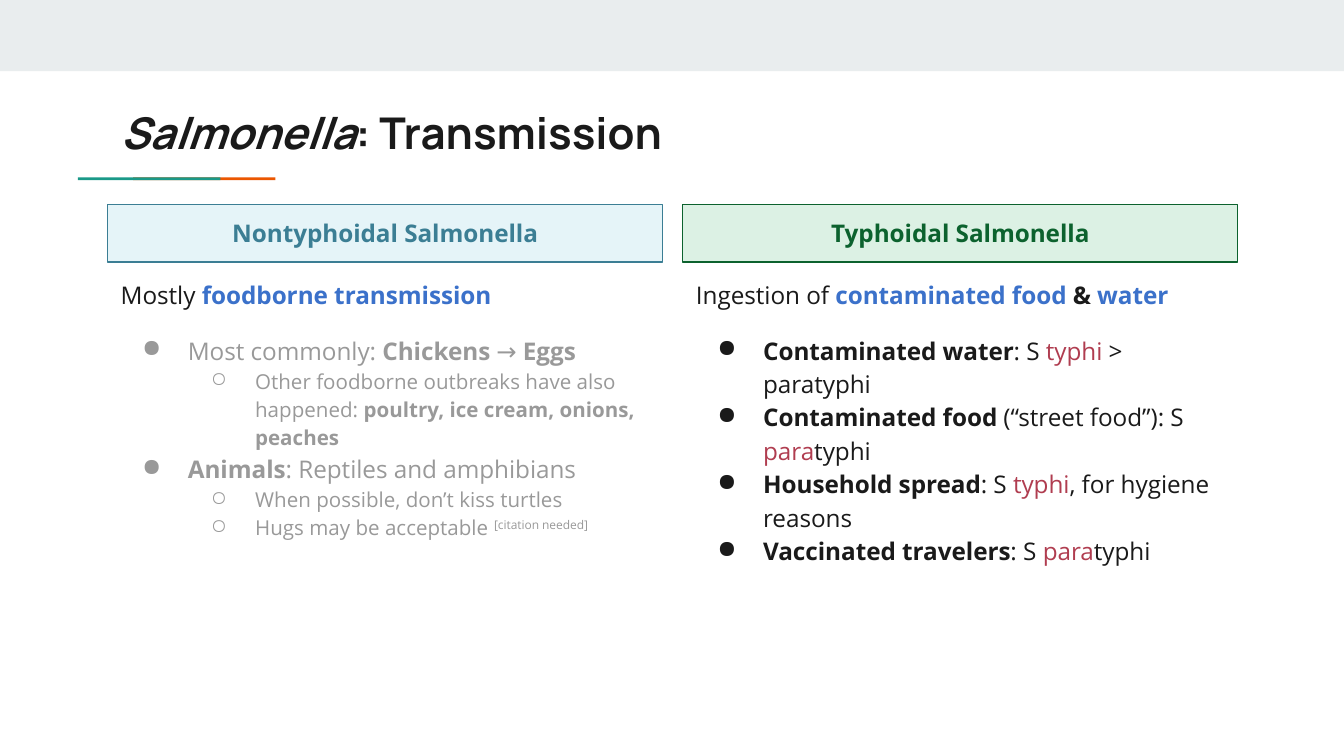
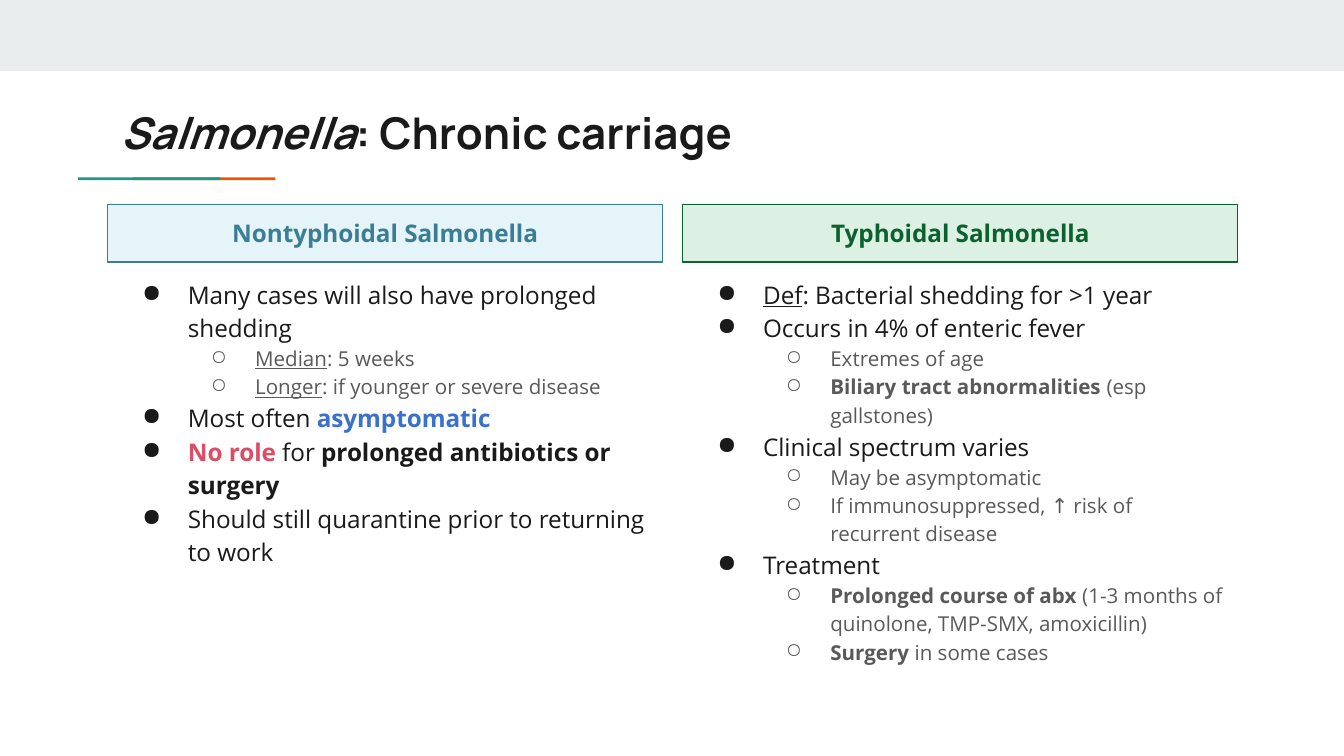
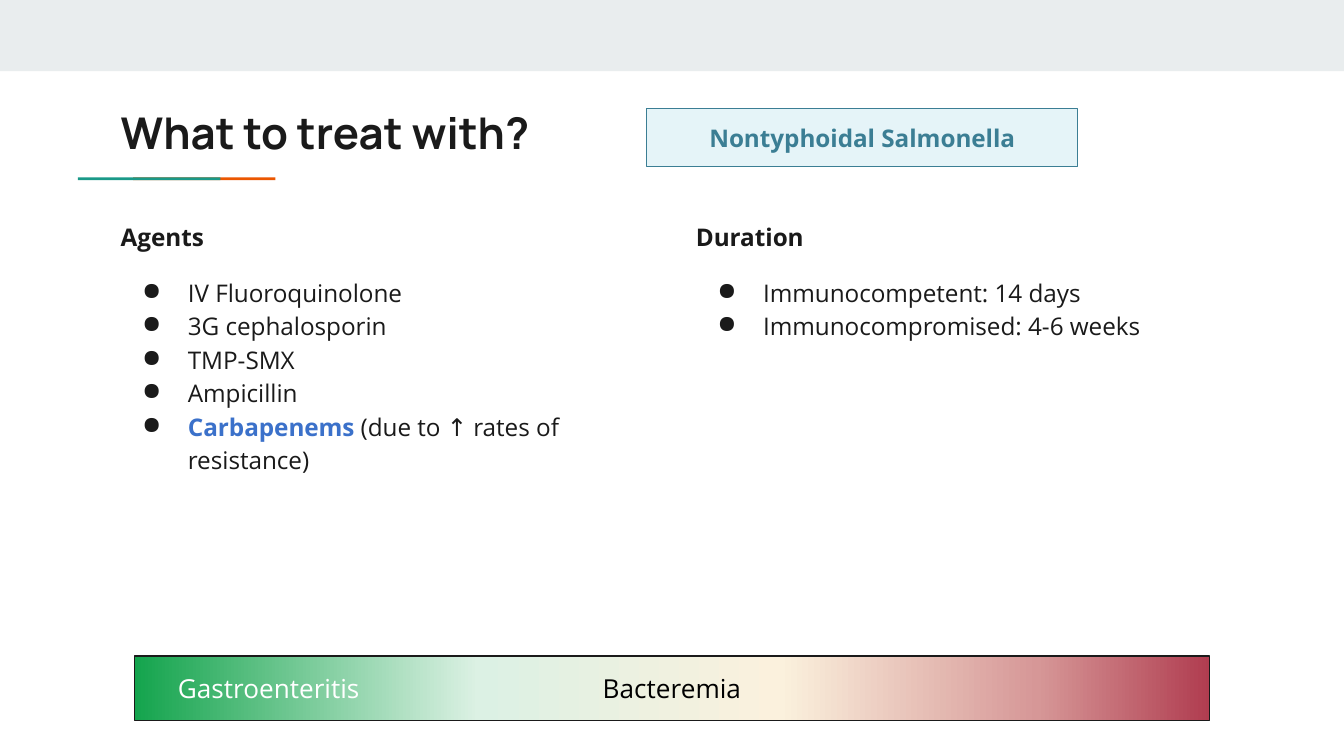
from dataclasses import dataclass

from lxml.etree import SubElement
from pptx import Presentation
from pptx.dml.color import RGBColor
from pptx.enum.shapes import MSO_SHAPE
from pptx.enum.text import MSO_ANCHOR, PP_ALIGN
from pptx.oxml.ns import qn
from pptx.util import Inches, Pt


@dataclass(frozen=True)
class Theme:
    head: str = "Manrope"
    body: str = "Open Sans"
    big: float = 23.4
    scale: float = 14
    text: float = 13
    small: float = 11
    ink: str = "1A1A1A"
    grey: str = "595959"
    dim: str = "999999"
    blue: str = "3B71CA"
    red: str = "B03D50"
    pink: str = "DC4C64"
    band: str = "E9EDEE"
    teal: str = "1A9988"
    orange: str = "EB5600"
    white: str = "FFFFFF"
    black: str = "000000"


T = Theme()

# Run formats; "color" is a hex value, the rest are font attributes
RUNS = {
    "b": {"bold": True},
    "i": {"italic": True},
    "u": {"underline": True},
    "key": {"bold": True, "color": T.blue},
    "red": {"color": T.red},
    "no": {"bold": True, "color": T.pink},
    "sup": {"base": 30000},
}

# Paragraph kinds: level, bullet, indent, hang, size, colour
KINDS = {
    "lead": (0, None, 0, 0, T.text, T.ink),
    "dot": (0, "●", 0.5, 0.34, T.text, T.ink),
    "sub": (1, "○", 1, 0.33, T.small, T.grey),
    "dim": (0, "●", 0.5, 0.34, T.text, T.dim),
    "dimsub": (1, "○", 1, 0.33, T.small, T.dim),
}

# Label kinds: text, fill, ink
LABELS = {
    "non": ("Nontyphoidal Salmonella", "E5F4F8", "3B7E94"),
    "typh": ("Typhoidal Salmonella", "DCF1E4", "0C622E"),
}

LEFT, RIGHT, COL = 0.8, 5.08, 4.13
TOP, TALL = 1.52, 0.43
LOW = TOP + TALL
PAIR = [("non", LEFT, TOP, COL), ("typh", RIGHT, TOP, COL)]

SLIDES = [
    {
        "title": [("Salmonella", "i"), ": Transmission"],
        "labels": PAIR,
        "top": LOW,
        "tall": (2.59, 3.15),
        "cols": [
            [
                ("lead", "Mostly ", ("foodborne transmission", "key")),
                ("dim", "Most commonly: ", ("Chickens ", "b"), "→ ", ("Eggs", "b")),
                ("dimsub", "Other foodborne outbreaks have also happened: ",
                 ("poultry, ice cream, onions, peaches", "b")),
                ("dim", ("Animals", "b"), ": Reptiles and amphibians"),
                ("dimsub", "When possible, don’t kiss turtles"),
                ("dimsub", "Hugs may be acceptable ", ("[citation needed]", "sup")),
            ],
            [
                ("lead", "Ingestion of ", ("contaminated food", "key"),
                 (" & ", "b"), ("water", "key")),
                ("dot", ("Contaminated water", "b"), ": S ", ("typhi", "red"),
                 " > paratyphi"),
                ("dot", ("Contaminated food", "b"), " (“street food”): S ",
                 ("para", "red"), "typhi"),
                ("dot", ("Household spread", "b"), ": S ", ("typhi", "red"),
                 ", for hygiene reasons"),
                ("dot", ("Vaccinated travelers", "b"), ": S ", ("para", "red"),
                 "typhi"),
            ],
        ],
    },
    {
        "title": [("Salmonella", "i"), ": Chronic carriage"],
        "labels": PAIR,
        "top": LOW,
        "tall": (2.59, 3.29),
        "cols": [
            [
                ("dot", "Many cases will also have prolonged shedding"),
                ("sub", ("Median", "u"), ": 5 weeks"),
                ("sub", ("Longer", "u"), ": if younger or severe disease"),
                ("dot", "Most often ", ("asymptomatic", "key")),
                ("dot", ("No role ", "no"), "for ",
                 ("prolonged antibiotics or surgery", "b")),
                ("dot", "Should still quarantine prior to returning to work"),
            ],
            [
                ("dot", ("Def", "u"), ": Bacterial shedding for >1 year"),
                ("dot", "Occurs in 4% of enteric fever"),
                ("sub", "Extremes of age"),
                ("sub", ("Biliary tract abnormalities", "b"), " (esp gallstones)"),
                ("dot", "Clinical spectrum varies"),
                ("sub", "May be asymptomatic"),
                ("sub", "If immunosuppressed, ↑ risk of recurrent disease"),
                ("dot", "Treatment"),
                ("sub", ("Prolonged course of abx", "b"),
                 " (1-3 months of quinolone, TMP-SMX, amoxicillin)"),
                ("sub", ("Surgery ", "b"), "in some cases"),
            ],
        ],
    },
    {
        "title": ["What to treat with?"],
        "labels": [("non", 4.81, 0.81, 3.21)],
        "top": TOP,
        "tall": (2.47, 2.47),
        "cols": [
            [
                ("lead", ("Agents", "b")),
                ("dot", "IV Fluoroquinolone"),
                ("dot", "3G cephalosporin"),
                ("dot", "TMP-SMX"),
                ("dot", "Ampicillin"),
                ("dot", ("Carbapenems ", "key"), "(due to ↑ rates of resistance)"),
            ],
            [
                ("lead", ("Duration", "b")),
                ("dot", "Immunocompetent: 14 days"),
                ("dot", "Immunocompromised: 4-6 weeks"),
            ],
        ],
        "scale": {
            "stops": [(0, "14A44D"), (32, "DCF1E4"), (60, "FBF1DD"),
                      (84, "D69797"), (100, "B03D50")],
            "marks": [("Gastroenteritis", 1, 2, T.white),
                      ("Bacteremia", 3, 4, T.black)],
        },
    },
]


def rgb(code):
    return RGBColor.from_string(code)


def rect(slide, x, y, w, h, fill=None, line=None):
    box = slide.shapes.add_shape(
        MSO_SHAPE.RECTANGLE, Inches(x), Inches(y), Inches(w), Inches(h))
    box.shadow.inherit = False
    if fill:
        box.fill.solid()
        box.fill.fore_color.rgb = rgb(fill)
    if line:
        box.line.color.rgb = rgb(line)
        box.line.width = Pt(0.75)
    else:
        box.line.fill.background()
    return box


def frame(shape, anchor=MSO_ANCHOR.TOP):
    """Set wrap, anchor and insets, and return the text frame."""
    body = shape.text_frame
    form = {"word_wrap": True, "vertical_anchor": anchor}
    form.update({f"margin_{side}": Inches(0.1)
                 for side in ("left", "top", "right", "bottom")})
    for name, value in form.items():
        setattr(body, name, value)
    return body


def area(slide, x, y, w, h, anchor=MSO_ANCHOR.TOP):
    """Add a text box and return its frame."""
    box = slide.shapes.add_textbox(Inches(x), Inches(y), Inches(w), Inches(h))
    return frame(box, anchor)


def write(para, parts, **base):
    """Add runs; each part is plain text or a (text, run format) pair."""
    for part in parts:
        text, style = (part, None) if isinstance(part, str) else part
        run = para.add_run()
        run.text = text
        form = {"name": T.body, "bold": False, **base, **RUNS.get(style, {})}
        for name, value in form.items():
            if name == "color":
                run.font.color.rgb = rgb(value)
            elif name == "base":
                run._r.get_or_add_rPr().set("baseline", str(value))
            else:
                setattr(run.font, name, value)


def bullet(para, mark, indent, hang, color):
    prop = para._p.get_or_add_pPr()
    prop.set("marL", str(Inches(indent)))
    prop.set("indent", str(-Inches(hang)))
    SubElement(SubElement(prop, qn("a:buClr")), qn("a:srgbClr"), val=color)
    SubElement(prop, qn("a:buChar"), char=mark)


def column(slide, x, y, h, items):
    body = area(slide, x, y, COL, h)
    last = None
    for kind, *parts in items:
        para = body.add_paragraph() if last else body.paragraphs[0]
        level, mark, indent, hang, size, color = KINDS[kind]
        para.level = level
        if mark:
            bullet(para, mark, indent, hang, color)
        para.line_spacing = 1.15
        para.space_before = Pt(12 if last == "lead" else 0)
        write(para, parts, size=Pt(size), color=color)
        last = kind


def label(slide, kind, x, y, w):
    text, fill, ink = LABELS[kind]
    box = rect(slide, x, y, w, TALL, fill, ink)
    para = frame(box, MSO_ANCHOR.MIDDLE).paragraphs[0]
    para.alignment = PP_ALIGN.CENTER
    write(para, [text], size=Pt(T.text), color=ink, bold=True)


def scale(slide, stops, marks):
    """Draw the severity bar and its words."""
    y, h = 4.88, 0.48
    bar = rect(slide, 1, y, 8, h, line=T.ink)
    bar.fill.gradient()
    bar.fill.gradient_angle = 0
    ramp = bar._element.spPr.find(".//" + qn("a:gsLst"))
    ramp.clear()
    for pos, color in stops:
        stop = SubElement(ramp, qn("a:gs"), pos=str(pos * 1000))
        SubElement(stop, qn("a:srgbClr"), val=color)
    for text, x, w, ink in marks:
        para = area(slide, x, y, w, h, MSO_ANCHOR.MIDDLE).paragraphs[0]
        para.alignment = PP_ALIGN.CENTER
        write(para, [text], size=Pt(T.scale), color=ink)


def base(slide, title):
    """Draw the band, accent rule and title that all slides share."""
    rect(slide, 0, 0, 10, 0.53, T.band)
    for x, color in ((0.99, T.orange), (0.58, T.teal)):
        rect(slide, x, 1.32, 1.06, 0.02, color)
    para = area(slide, LEFT, 0.69, 8.41, 0.59).paragraphs[0]
    write(para, title, name=T.head, size=Pt(T.big), color=T.ink, bold=True)


def main():
    deck = Presentation()
    deck.slide_width = Inches(10)
    deck.slide_height = Inches(10 * 9 / 16)
    for page in SLIDES:
        slide = deck.slides.add_slide(deck.slide_layouts[6])
        base(slide, page["title"])
        for spot in page["labels"]:
            label(slide, *spot)
        for x, h, items in zip((LEFT, RIGHT), page["tall"], page["cols"]):
            column(slide, x, page["top"], h, items)
        if "scale" in page:
            scale(slide, **page["scale"])
    deck.save("out.pptx")


if __name__ == "__main__":
    main()
